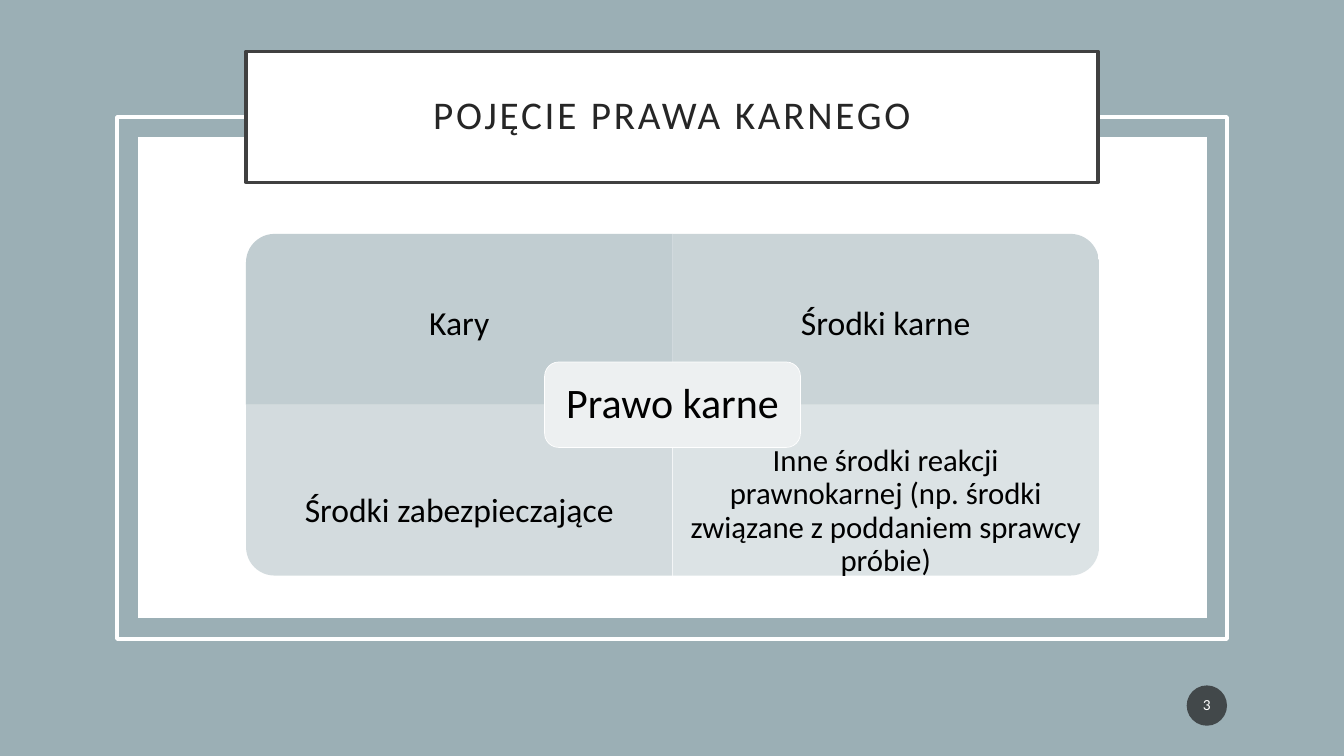
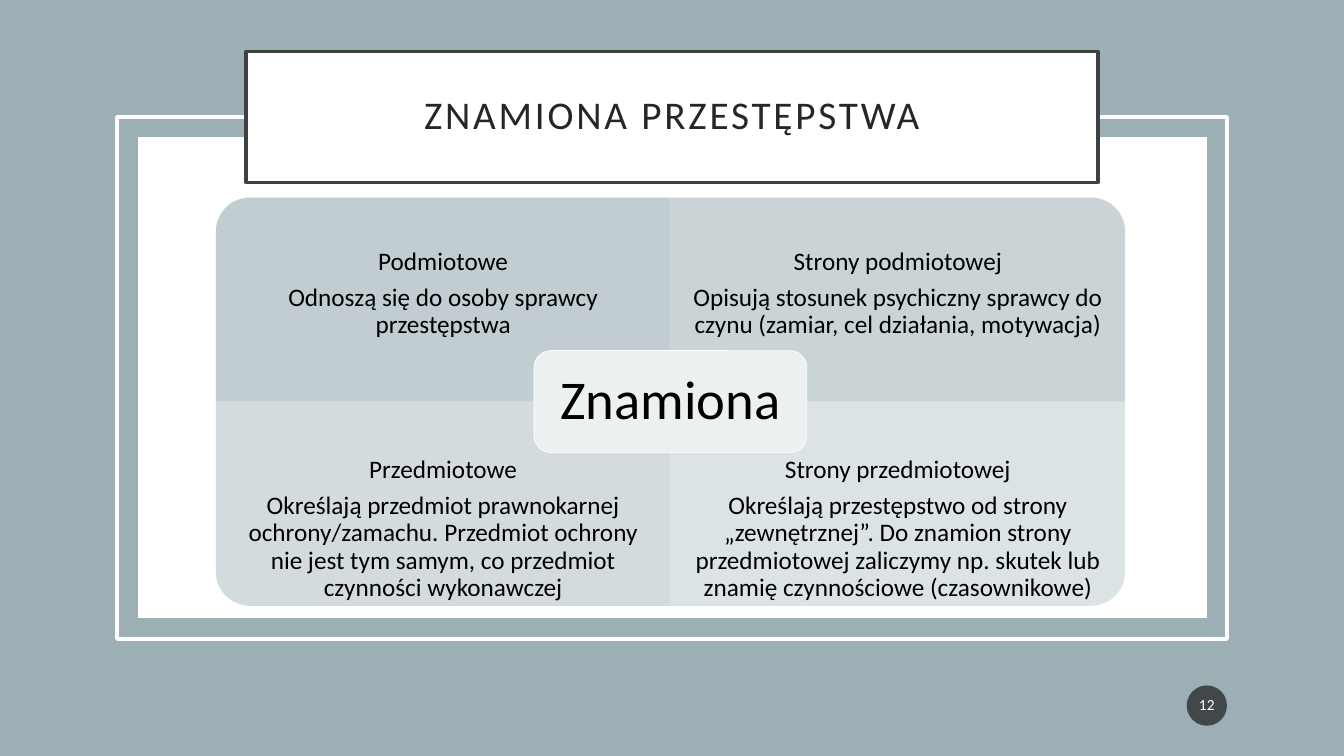
from dataclasses import dataclass

from lxml.etree import SubElement
from pptx import Presentation
from pptx.dml.color import RGBColor
from pptx.enum.shapes import MSO_SHAPE as Shape
from pptx.enum.text import MSO_ANCHOR as Anchor, PP_ALIGN as Align
from pptx.oxml.ns import qn
from pptx.util import Inches, Pt

COLORS = {
    "background": "9BAFB5",
    "white": "FFFFFF",
    "title_border": "404040",
    "title": "262626",
    "text": "000000",
    "number": "1D1D1D",
    "tile_top": "BBC8CC",
    "tile_bottom": "B8C6CB",
    "hub_top": "EDF0F1",
    "hub_bottom": "ECEFF0",
}
FONT = "Calibri"


@dataclass(frozen=True)
class Box:
    left: float
    top: float
    width: float
    height: float

    def inches(self) -> tuple:
        return tuple(Inches(n) for n in (self.left, self.top, self.width, self.height))


@dataclass(frozen=True)
class Corner:
    """Place of a tile in the matrix, its turn and its opacity."""
    column: int
    row: int
    rotation: int
    opacity: int


@dataclass(frozen=True)
class Tile:
    lines: tuple[str, ...]
    size: int


@dataclass(frozen=True)
class Matrix:
    title: str
    number: int
    area: Box
    hub: Tile
    tiles: tuple[Tile, ...]


PANEL = Box(1.37, 1.36, 10.6, 4.77)
FRAME = Box(1.16, 1.16, 11.01, 5.18)
TITLE = Box(2.44, 0.51, 8.45, 1.3)
NUMBER = Box(11.77, 6.8, 0.4, 0.4)

CORNERS = (
    Corner(0, 0, 270, 90),
    Corner(1, 0, 0, 77),
    Corner(0, 1, 180, 63),
    Corner(1, 1, 90, 50),
)
TEXT_SHARE = 0.75  # part of a tile's height left free by the hub
TOP_DROP = 0.011  # inches per point by which upper texts sit lower

MATRICES = (
    Matrix(
        "POJĘCIE PRAWA KARNEGO", 3, Box(2.44, 2.32, 8.46, 3.39),
        Tile(("Prawo karne",), 30),
        (
            Tile(("Kary",), 24),
            Tile(("Środki karne",), 24),
            Tile(("Środki zabezpieczające",), 24),
            Tile(("Inne środki reakcji prawnokarnej (np. środki związane "
                  "z poddaniem sprawcy próbie)",), 22),
        ),
    ),
    Matrix(
        "ZNAMIONA PRZESTĘPSTWA", 12, Box(2.14, 1.96, 9.02, 4.05),
        Tile(("Znamiona",), 39),
        (
            Tile(("Podmiotowe", "Odnoszą się do osoby sprawcy przestępstwa"), 18),
            Tile(("Strony podmiotowej",
                  "Opisują stosunek psychiczny sprawcy do czynu "
                  "(zamiar, cel działania, motywacja)"), 18),
            Tile(("Przedmiotowe",
                  "Określają przedmiot prawnokarnej ochrony/zamachu. Przedmiot "
                  "ochrony nie jest tym samym, co przedmiot czynności "
                  "wykonawczej"), 18),
            Tile(("Strony przedmiotowej",
                  "Określają przestępstwo od strony „zewnętrznej”. Do znamion "
                  "strony przedmiotowej zaliczymy np. skutek lub znamię "
                  "czynnościowe (czasownikowe)"), 18),
        ),
    ),
)


def rgb(name: str) -> RGBColor:
    return RGBColor.from_string(COLORS[name])


def add_box(slide, box: Box, *fills: str, kind=Shape.RECTANGLE, opacity: int = 100,
            border: str = "", border_width: float = 2.5, rotation: int = 0):
    """Draw a shape with no fill, one fill colour or a two-colour gradient."""
    shape = slide.shapes.add_shape(kind, *box.inches())
    shape.shadow.inherit = False
    shape.rotation = rotation
    if len(fills) == 2:
        shape.fill.gradient()
        shape.fill.gradient_angle = 270
        for stop, name in zip(shape.fill.gradient_stops, fills):
            stop.color.rgb = rgb(name)
    elif fills:
        shape.fill.solid()
        shape.fill.fore_color.rgb = rgb(fills[0])
    else:
        shape.fill.background()
    if opacity < 100:
        for color in shape.element.spPr.iter(qn("a:srgbClr")):
            SubElement(color, qn("a:alpha")).set("val", str(opacity * 1000))
    if border:
        shape.line.color.rgb = rgb(border)
        shape.line.width = Pt(border_width)
    else:
        shape.line.fill.background()
    return shape


def write(shape, *lines: str, size: float, color: str = "text",
          inset: float = 0, tracking: float = 0) -> None:
    """Centre the lines in the shape, one paragraph each; inset is in inches."""
    frame = shape.text_frame
    frame.word_wrap = True
    frame.vertical_anchor = Anchor.MIDDLE
    frame.margin_left = frame.margin_right = Inches(inset)
    frame.margin_top = frame.margin_bottom = Inches(inset)
    for index, line in enumerate(lines):
        paragraph = frame.add_paragraph() if index else frame.paragraphs[0]
        paragraph.alignment = Align.CENTER
        paragraph.line_spacing = 0.9
        paragraph.space_after = Pt(0.35 * size)
        run = paragraph.add_run()
        run.text = line
        run.font.name = FONT
        run.font.size = Pt(size)
        run.font.color.rgb = rgb(color)
        if tracking:
            run._r.get_or_add_rPr().set("spc", str(int(tracking * 100)))


def add_base(slide, title: str, number: int) -> None:
    """Draw what all slides share: background, frame, title and number."""
    slide.background.fill.solid()
    slide.background.fill.fore_color.rgb = rgb("background")
    add_box(slide, PANEL, "white")
    add_box(slide, FRAME, border="white")
    heading = add_box(slide, TITLE, "white", border="title_border")
    write(heading, title, size=28, color="title", inset=0.2, tracking=2)
    badge = add_box(slide, NUMBER, "number", kind=Shape.OVAL, opacity=70)
    write(badge, str(number), size=11, color="white", inset=0.02)


def add_tile(slide, area: Box, corner: Corner, tile: Tile) -> None:
    width, height = area.width / 2, area.height / 2
    left = area.left + corner.column * width
    top = area.top + corner.row * height
    outline = Box(left, top, width, height)
    if corner.rotation % 180:
        shift = (width - height) / 2
        outline = Box(left + shift, top - shift, height, width)
    add_box(slide, outline, "tile_top", "tile_bottom", kind=Shape.ROUND_1_RECTANGLE,
            opacity=corner.opacity, rotation=corner.rotation)

    text_height = TEXT_SHARE * height
    drop = height - text_height if corner.row else TOP_DROP * tile.size
    label = slide.shapes.add_textbox(*Box(left, top + drop, width, text_height).inches())
    write(label, *tile.lines, size=tile.size, inset=tile.size / 128)


def add_hub(slide, area: Box, hub: Tile) -> None:
    width, height = 0.3 * area.width, 0.25 * area.height
    box = Box(area.left + (area.width - width) / 2,
              area.top + (area.height - height) / 2, width, height)
    center = add_box(slide, box, "hub_top", "hub_bottom", kind=Shape.ROUNDED_RECTANGLE,
                     border="white", border_width=0.5)
    write(center, *hub.lines, size=hub.size, inset=0.1)


def main() -> None:
    deck = Presentation()
    deck.slide_width, deck.slide_height = Inches(13.33), Inches(7.5)
    for matrix in MATRICES:
        slide = deck.slides.add_slide(deck.slide_layouts[6])
        add_base(slide, matrix.title, matrix.number)
        for corner, tile in zip(CORNERS, matrix.tiles):
            add_tile(slide, matrix.area, corner, tile)
        add_hub(slide, matrix.area, matrix.hub)
    deck.save("out.pptx")


if __name__ == "__main__":
    main()
